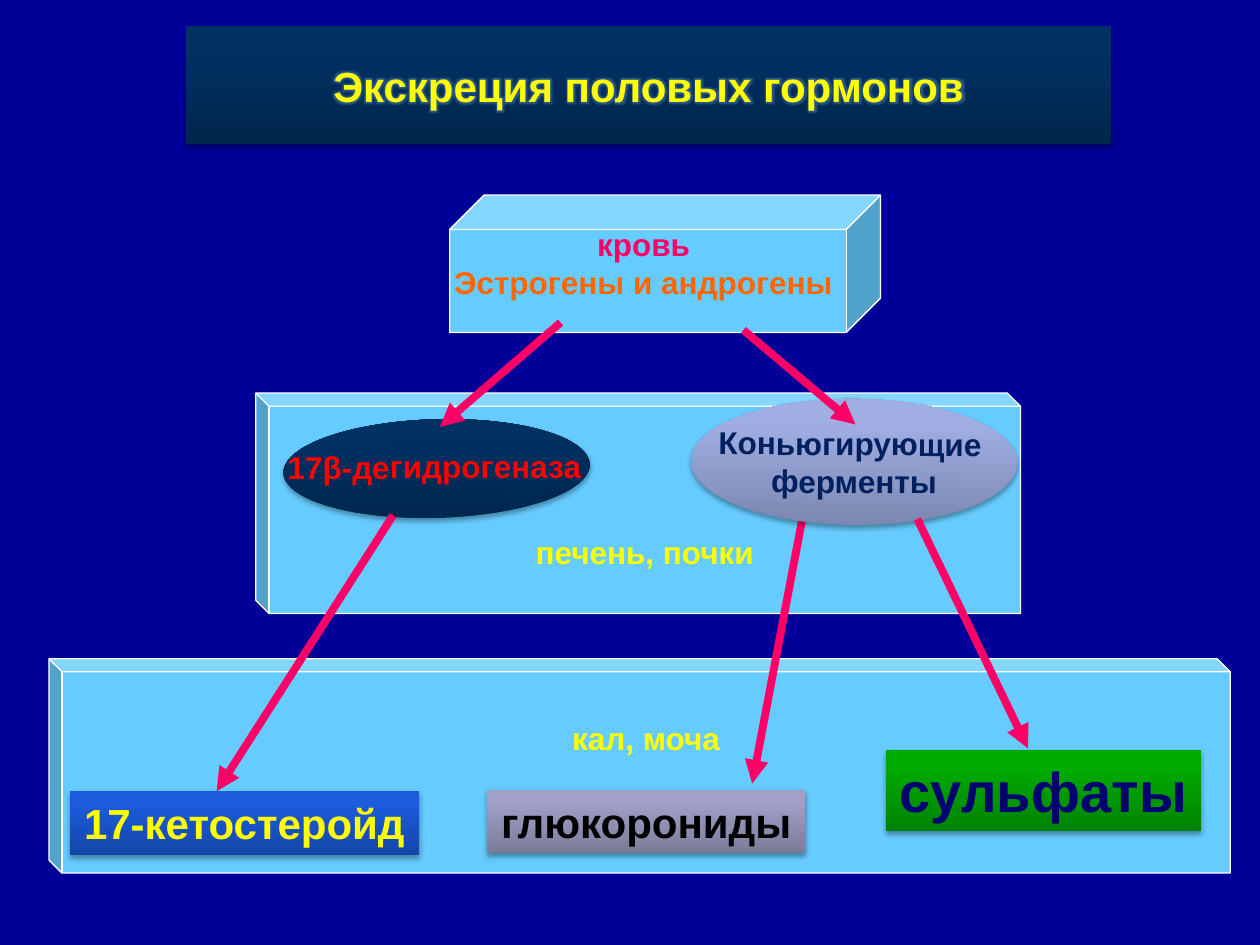
import pptx
import pptx.util
import pptx.dml.color
import pptx.enum.shapes
import pptx.enum.text
import pptx.oxml
import pptx.oxml.ns

Pt = pptx.util.Pt
KIND = pptx.enum.shapes.MSO_SHAPE
ALIGN = pptx.enum.text.PP_ALIGN
TOP, MID, LOW = (pptx.enum.text.MSO_ANCHOR.TOP,
                 pptx.enum.text.MSO_ANCHOR.MIDDLE,
                 pptx.enum.text.MSO_ANCHOR.BOTTOM)
NS = pptx.oxml.ns.nsdecls("a")
qn = pptx.oxml.ns.qn


def rgb(text):
    return pptx.dml.color.RGBColor.from_string(text)


def write(shape, lines, size, anchor=MID, align=ALIGN.CENTER):
    """Each line is a pair of text and colour."""
    frame = shape.text_frame
    frame.word_wrap = False
    frame.vertical_anchor = anchor
    for i, (text, color) in enumerate(lines):
        para = frame.add_paragraph() if i else frame.paragraphs[0]
        para.alignment = align
        run = para.add_run()
        run.text = text
        run.font.name = "Arial"
        run.font.size = Pt(size)
        run.font.bold = True
        run.font.color.rgb = rgb(color)


deck = pptx.Presentation()
deck.slide_width, deck.slide_height = Pt(720), Pt(540)
slide = deck.slides.add_slide(deck.slide_layouts[6])
slide.background.fill.solid()
slide.background.fill.fore_color.rgb = rgb("000099")
shapes = slide.shapes

# Cubes: box, depth, flip, anchor, top and bottom inset, lines
cubes = [
    ((28, 376.5, 675, 122.4), 0.06, True, TOP, 27, 3.6,
     [("кал, моча", "FFFF00")]),
    ((146.2, 224.6, 437, 126), 0.06, True, LOW, 3.6, 24.3,
     [("печень, почки", "FFFF00")]),
    ((257, 111.5, 246.2, 78.5), 0.25, False, MID, 3.6, 24.3,
     [("кровь ", "FF0066"), ("Эстрогены и андрогены ", "FF6600")]),
]
for place, depth, flip, anchor, above, below, lines in cubes:
    cube = shapes.add_shape(KIND.CUBE, *map(Pt, place))
    cube.adjustments[0] = depth
    cube.fill.solid()
    cube.fill.fore_color.rgb = rgb("66CCFF")
    cube.line.color.rgb = rgb("FFFFFF")
    cube.line.width = Pt(0.75)
    cube.shadow.inherit = False
    if flip:
        cube._element.spPr.find(qn("a:xfrm")).set("flipH", "1")
    write(cube, lines, 18, anchor)
    cube.text_frame.margin_top = Pt(above)
    cube.text_frame.margin_bottom = Pt(below)

# Shaded shapes: kind, box, turn, bottom and top colour, size, lines
shaded = [
    (KIND.RECTANGLE, (106.4, 15, 528.5, 67.5), 0, "00264C", "003163", 24,
     [("Экскреция половых гормонов", "FFFF00")]),
    (KIND.OVAL, (162, 239.6, 175, 56.3), -1.6, "00264C", "003163", 18, []),
    (KIND.OVAL, (395, 228, 186.2, 72), 0.4, "7B86AF", "A0AEE3", 18,
     [("Коньюгирующие ", "002060"), ("ферменты", "002060")]),
    (KIND.RECTANGLE, (39.9, 452.2, 199.5, 36.4), 0, "1546A9", "1B5BDC", 24,
     [("17-кетостеройд", "FFFF00")]),
    (KIND.RECTANGLE, (278.4, 451.2, 181.8, 36.4), 0, "7B7B9A", "A0A0C8", 24,
     [("глюкорониды", "000000")]),
    (KIND.RECTANGLE, (506.3, 428.6, 180, 46.2), 0, "008300", "00AB00", 32,
     [("сульфаты", "000073")]),
]
made = []
for kind, place, turn, dark, light, size, lines in shaded:
    shape = shapes.add_shape(kind, *map(Pt, place))
    shape.rotation = turn
    shape.fill.gradient()
    shape.fill.gradient_angle = 90
    for stop, spot, color in zip(shape.fill.gradient_stops,
                                 (0, 0.8), (dark, light)):
        stop.position = spot
        stop.color.rgb = rgb(color)
    shape.line.fill.background()
    shape.shadow.inherit = False
    shape._element.spPr.find(qn("a:effectLst")).append(pptx.oxml.parse_xml(
        f'<a:outerShdw {NS} blurRad="{Pt(3.1)}" dist="{Pt(1.8)}" '
        'dir="5400000" rotWithShape="0"><a:srgbClr val="000000">'
        '<a:alpha val="35000"/></a:srgbClr></a:outerShdw>'))
    write(shape, lines, size)
    made.append(shape)
title, left, right = made[:3]

# Soft glow behind the title
font = title.text_frame.paragraphs[0].runs[0]._r.rPr
font.find(qn("a:solidFill")).addnext(pptx.oxml.parse_xml(
    f'<a:effectLst {NS}><a:glow rad="{Pt(5)}"><a:srgbClr val="6699CC">'
    '<a:alpha val="40000"/></a:srgbClr></a:glow></a:effectLst>'))

# Label over the left oval
label = shapes.add_textbox(Pt(157.2), Pt(252), Pt(195.8), Pt(29))
label.rotation = -0.3
write(label, [("17β-дегидрогеназа", "FF0000")], 18, TOP, ALIGN.LEFT)

# Arrows: start and end
arrows = [
    (459.4, 291.6, 429.8, 447.8),
    (524.2, 296.6, 587.5, 427.7),
    (224.6, 294.5, 123.8, 452.2),
    (424.8, 188.6, 488.9, 242.6),
    (320.4, 184.3, 251.3, 244),
]
for i, ends in enumerate(arrows):
    arrow = shapes.add_connector(
        pptx.enum.shapes.MSO_CONNECTOR.STRAIGHT, *map(Pt, ends))
    arrow.line.color.rgb = rgb("FF0066")
    arrow.line.width = Pt(4.5)
    arrow.line._ln.append(pptx.oxml.parse_xml(
        f'<a:tailEnd {NS} type="triangle"/>'))
    arrow._element.spPr.append(pptx.oxml.parse_xml(f"<a:effectLst {NS}/>"))
    if i == 0:  # this one starts behind the right oval
        right._element.addprevious(arrow._element)

deck.save("out.pptx")
